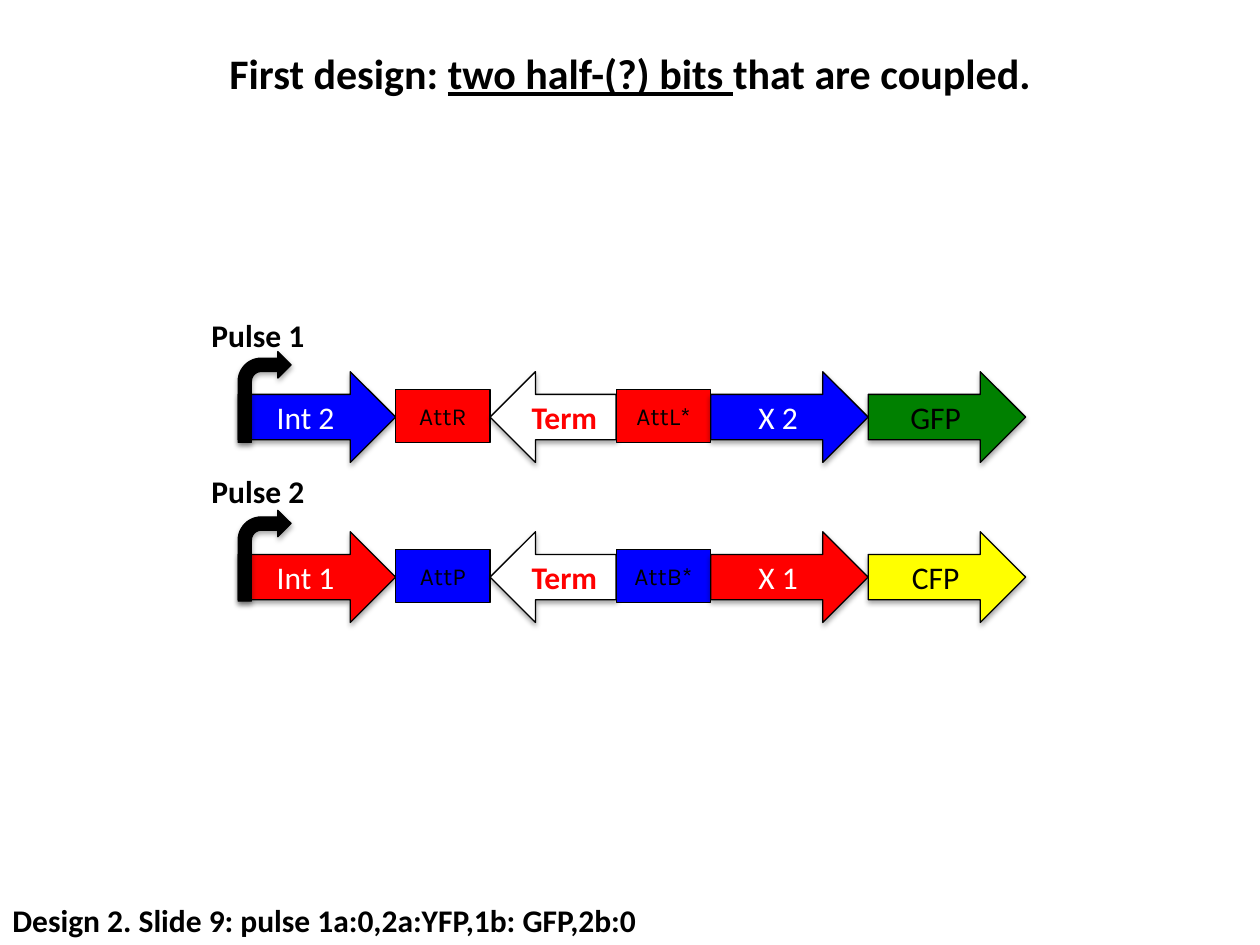
from lxml import etree
from pptx import Presentation
from pptx.dml.color import RGBColor
from pptx.enum.shapes import MSO_SHAPE
from pptx.enum.text import MSO_ANCHOR, MSO_AUTO_SIZE, PP_ALIGN
from pptx.oxml.ns import qn
from pptx.util import Inches, Pt

ARROW, BENT, RECT = MSO_SHAPE.RIGHT_ARROW, MSO_SHAPE.BENT_ARROW, MSO_SHAPE.RECTANGLE
CENTER, LEFT = PP_ALIGN.CENTER, PP_ALIGN.LEFT
TOP, MIDDLE = MSO_ANCHOR.TOP, MSO_ANCHOR.MIDDLE
BLACK, WHITE, RED, BLUE = "000000", "FFFFFF", "FF0000", "0000FF"
GREEN, YELLOW = "008000", "FFFF00"

# Content: title runs as (text, underlined)
TITLE = [("First design: ", False), ("two half-(?) bits ", True),
         ("that are coupled.", False)]
FOOTER = "Design 2. Slide 9: pulse 1a:0,2a:YFP,1b: GFP,2b:0"

# Each part: (kind, label, fill, text colour)
CIRCUITS = [
    {"label": "Pulse 1", "label_top": 2.46, "promoter_top": 2.79, "top": 2.95,
     "parts": [("gene", "Int 2", BLUE, WHITE), ("site", "AttR", RED, BLACK),
               ("term", "Term", WHITE, RED), ("site", "AttL*", RED, BLACK),
               ("gene", "X 2", BLUE, WHITE), ("gene", "GFP", GREEN, BLACK)]},
    {"label": "Pulse 2", "label_top": 3.7, "promoter_top": 4.05, "top": 4.22,
     "parts": [("gene", "Int 1", RED, WHITE), ("site", "AttP", BLUE, BLACK),
               ("term", "Term", WHITE, RED), ("site", "AttB*", BLUE, BLACK),
               ("gene", "X 1", RED, WHITE), ("gene", "CFP", YELLOW, BLACK)]},
]

# Geometry in inches
START_X, ARROW_H = 1.89, 0.72
SITE_DY, SITE_H = 0.14, 0.42
WIDTHS = {"gene": 1.25, "site": 0.75, "term": 1.0}


def rgb(color):
    return RGBColor.from_string(color)


def style(p, size, color, bold=False, font="Calibri", align=CENTER):
    p.alignment = align
    p.font.size, p.font.name, p.font.bold = Pt(size), font, bold
    p.font.color.rgb = rgb(color)


def add_box(slide, kind, x, y, w, h, fill, shadow=True):
    sp = slide.shapes.add_shape(kind, Inches(x), Inches(y), Inches(w), Inches(h))
    sp.fill.solid()
    sp.fill.fore_color.rgb = rgb(fill)
    sp.line.color.rgb = rgb(BLACK)
    sp.line.width = Pt(0.75)
    sp.shadow.inherit = False
    if shadow:
        effects = sp._element.spPr.find(qn("a:effectLst"))
        outer = etree.SubElement(effects, qn("a:outerShdw"), blurRad=str(Pt(3.1)),
                                 dist=str(Pt(1.8)), dir="5400000", rotWithShape="0")
        clr = etree.SubElement(outer, qn("a:srgbClr"), val=BLACK)
        etree.SubElement(clr, qn("a:alpha"), val="35000")
    return sp


def add_part(slide, kind, text, fill, color, x, top):
    site = kind == "site"
    sp = add_box(slide, RECT if site else ARROW, x, top + (SITE_DY if site else 0),
                 WIDTHS[kind], SITE_H if site else ARROW_H, fill, shadow=not site)
    if kind == "term":
        sp._element.spPr.find(qn("a:xfrm")).set("flipH", "1")
    tf = sp.text_frame
    tf.word_wrap = not site
    tf.vertical_anchor = MIDDLE
    p = tf.paragraphs[0]
    p.text = text
    style(p, 14 if site else 18, color, kind == "term", "Karla" if site else "Calibri")


def add_label(slide, text, x, y, w, wrap):
    tf = slide.shapes.add_textbox(Inches(x), Inches(y), Inches(w), Inches(0.4)).text_frame
    tf.word_wrap = wrap
    tf.auto_size = MSO_AUTO_SIZE.SHAPE_TO_FIT_TEXT
    p = tf.paragraphs[0]
    p.text = text
    style(p, 18, BLACK, bold=True, align=LEFT)


def main():
    prs = Presentation()
    prs.slide_width, prs.slide_height = Inches(10), Inches(7.5)
    slide = prs.slides.add_slide(prs.slide_layouts[5])

    # Title
    title = slide.shapes.title
    title.left, title.top = Inches(0), Inches(0.33)
    title.width, title.height = Inches(10), Inches(0.5)
    tf = title.text_frame
    tf.vertical_anchor = TOP
    tf.auto_size = MSO_AUTO_SIZE.SHAPE_TO_FIT_TEXT
    p = tf.paragraphs[0]
    style(p, 24, BLACK, bold=True)
    for text, underlined in TITLE:
        r = p.add_run()
        r.text = text
        r.font.underline = underlined

    # Circuits: parts laid end to end, promoter on top of the first gene
    for circuit in CIRCUITS:
        x = START_X
        for kind, text, fill, color in circuit["parts"]:
            add_part(slide, kind, text, fill, color, x, circuit["top"])
            x += WIDTHS[kind]
        add_box(slide, BENT, START_X, circuit["promoter_top"], 0.42, ARROW_H, BLACK)
        add_label(slide, circuit["label"], 1.58, circuit["label_top"], 0.97, False)

    # Footer
    add_label(slide, FOOTER, 0, 7.1, 6.5, True)
    prs.save("out.pptx")


if __name__ == "__main__":
    main()
